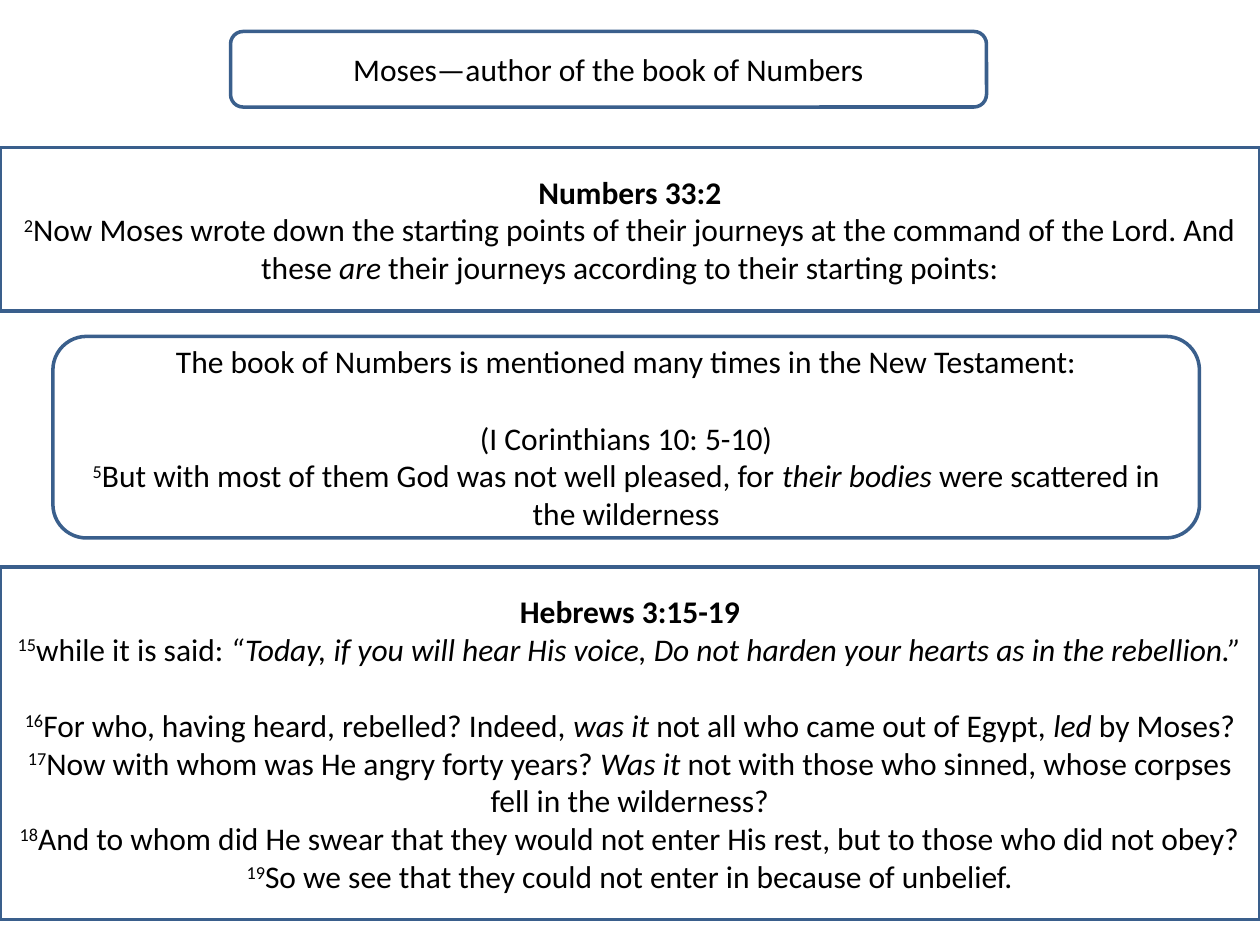
from dataclasses import dataclass

from pptx import Presentation
from pptx.dml.color import RGBColor
from pptx.enum.shapes import MSO_SHAPE
from pptx.enum.text import MSO_ANCHOR, PP_ALIGN
from pptx.util import Inches, Pt


@dataclass(frozen=True)
class Theme:
    font: str = "Calibri"
    size: Pt = Pt(18)
    gap: Pt = Pt(22)  # one line of text
    text: RGBColor = RGBColor(0x00, 0x00, 0x00)
    fill: RGBColor = RGBColor(0xFF, 0xFF, 0xFF)
    line: RGBColor = RGBColor(0x3A, 0x5F, 0x8C)
    line_width: Pt = Pt(2)


THEME = Theme()
WIDTH, HEIGHT = 10, 7.5
PLAIN, BOLD, ITALIC, VERSE, GAP = "plain", "bold", "italic", "verse", "gap"

# Content: each paragraph is a list of (style, text); GAP leaves a line above
AUTHOR = [[(PLAIN, "Moses—author of the book of Numbers")]]
NUMBERS = [
    [(BOLD, "Numbers 33:2")],
    [(VERSE, "2"),
     (PLAIN, "Now Moses wrote down the starting points of their journeys "
             "at the command of the Lord. And these "),
     (ITALIC, "are"),
     (PLAIN, " their journeys according to their starting points:")],
]
CORINTHIANS = [
    [(PLAIN, "The book of Numbers is mentioned many times in the New Testament:")],
    [(GAP, "(I Corinthians 10: 5-10)")],
    [(VERSE, "5"),
     (PLAIN, "But with most of them God was not well pleased, for "),
     (ITALIC, "their bodies"),
     (PLAIN, " were scattered in the wilderness")],
]
HEBREWS = [
    [(BOLD, "Hebrews 3:15-19")],
    [(VERSE, "15"), (PLAIN, "while it is said: "),
     (ITALIC, "“Today, if you will hear His voice, Do not harden your hearts "
              "as in the rebellion.”")],
    [(GAP, ""), (VERSE, "16"),
     (PLAIN, "For who, having heard, rebelled? Indeed, "),
     (ITALIC, "was it"), (PLAIN, " not all who came out of Egypt, "),
     (ITALIC, "led"), (PLAIN, " by Moses?")],
    [(VERSE, "17"), (PLAIN, "Now with whom was He angry forty years? "),
     (ITALIC, "Was it"),
     (PLAIN, " not with those who sinned, whose corpses fell in the wilderness?")],
    [(VERSE, "18"),
     (PLAIN, "And to whom did He swear that they would not enter His rest, "
             "but to those who did not obey?")],
    [(VERSE, "19"),
     (PLAIN, "So we see that they could not enter in because of unbelief.")],
]

# Panels: shape, left, top, width, height (inches), content
ROUND, RECT = MSO_SHAPE.ROUNDED_RECTANGLE, MSO_SHAPE.RECTANGLE
PANELS = [
    (ROUND, 1.83, 0.25, 6, 0.6, AUTHOR),
    (RECT, 0, 1.17, WIDTH, 1.3, NUMBERS),
    (ROUND, 0.42, 2.67, 9.1, 1.6, CORINTHIANS),
    (RECT, 0, 4.5, WIDTH, 2.8, HEBREWS),
]


def add_paragraph(p, runs):
    p.alignment = PP_ALIGN.CENTER
    p.font.name, p.font.size = THEME.font, THEME.size
    p.font.color.rgb = THEME.text
    for style, text in runs:
        if style == GAP:
            p.space_before = THEME.gap
        if not text:
            continue
        r = p.add_run()
        r.text = text
        if style == BOLD:
            r.font.bold = True
        elif style == ITALIC:
            r.font.italic = True
        elif style == VERSE:
            r._r.get_or_add_rPr().set("baseline", "30000")


def add_panel(s, shape, left, top, width, height, paragraphs):
    sp = s.shapes.add_shape(shape, *map(Inches, (left, top, width, height)))
    sp.shadow.inherit = False
    sp.fill.solid()
    sp.fill.fore_color.rgb = THEME.fill
    sp.line.color.rgb = THEME.line
    sp.line.width = THEME.line_width
    tf = sp.text_frame
    tf.word_wrap = True
    tf.vertical_anchor = MSO_ANCHOR.MIDDLE
    for i, runs in enumerate(paragraphs):
        add_paragraph(tf.add_paragraph() if i else tf.paragraphs[0], runs)


def main():
    prs = Presentation()
    prs.slide_width, prs.slide_height = Inches(WIDTH), Inches(HEIGHT)
    s = prs.slides.add_slide(prs.slide_layouts[6])
    for panel in PANELS:
        add_panel(s, *panel)
    prs.save("out.pptx")


if __name__ == "__main__":
    main()
